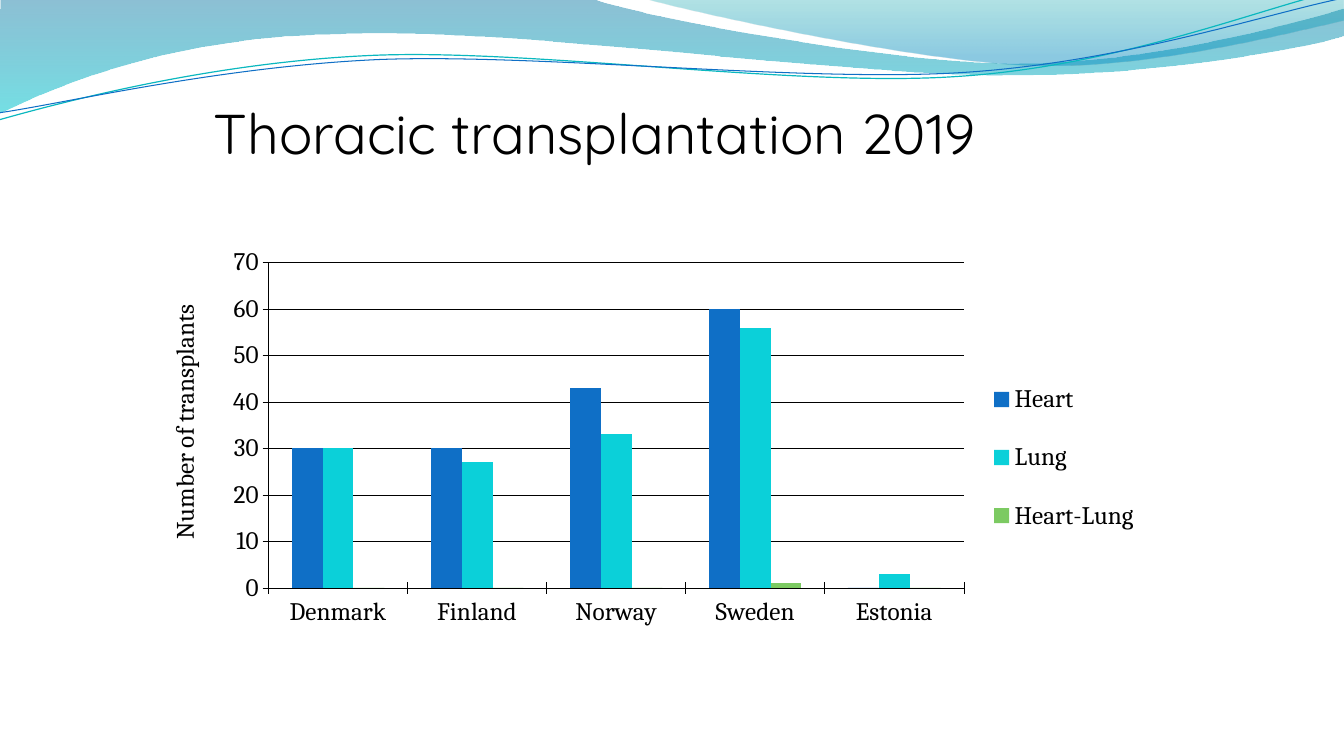
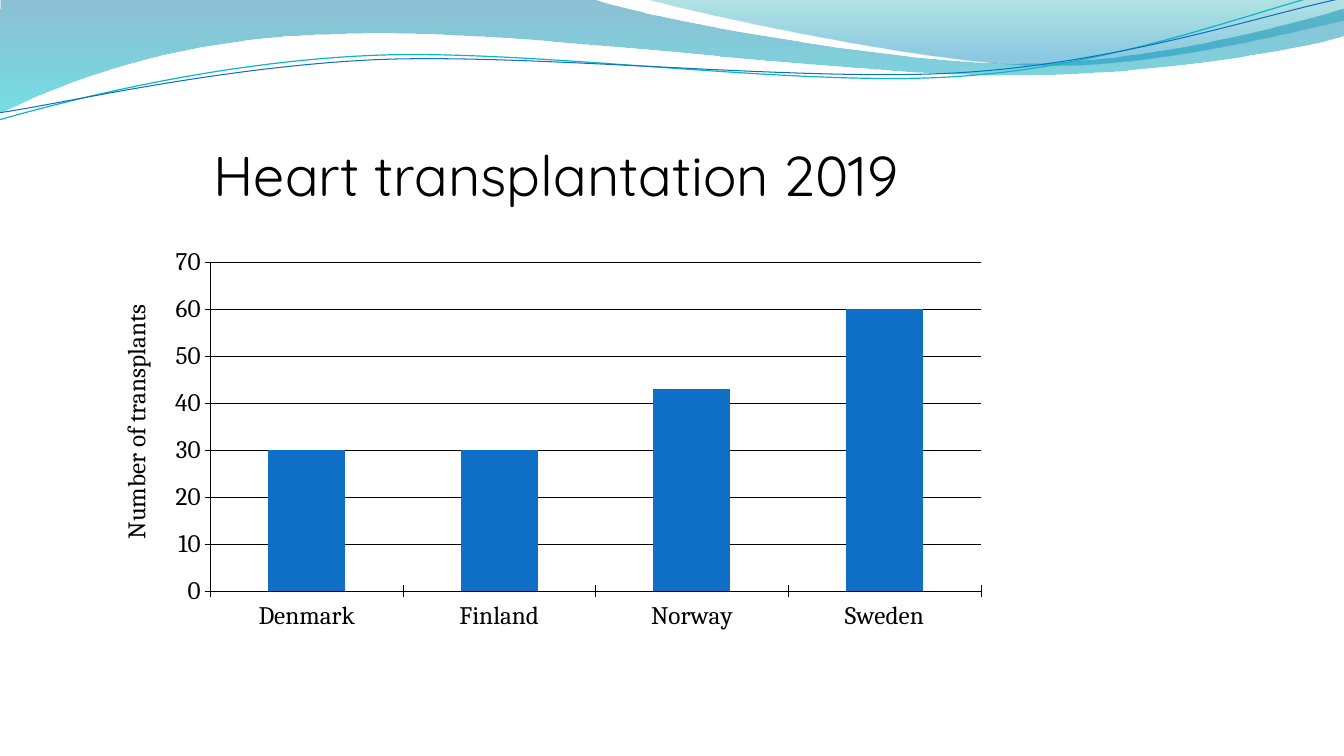
import math
from lxml import etree
from pptx import Presentation
from pptx.chart import data
from pptx.dml import color
from pptx.enum import chart as kinds, text
from pptx.oxml import ns
from pptx.util import Pt

RGB = color.RGBColor
BLACK = RGB(0, 0, 0)
BLUE = RGB(0x0F, 0x6F, 0xC6)
CYAN = RGB(0x0B, 0xD0, 0xD9)
GREEN = RGB(0x7C, 0xCA, 0x62)
TEAL = RGB(0x0A, 0xB8, 0xBF)
DEEP = RGB(0x00, 0x74, 0xA1)
AQUA = RGB(0x00, 0xC6, 0xCF)
SEA = RGB(0x00, 0xA1, 0xA9)
SKY = RGB(0x00, 0x8B, 0xBF)
HEAD, BODY = "Quicksand", "Cambria"
TILT = 2.7

WIDE = [(0, 0), (422.6, -0.7),
        (456.5, 12.2, 636.5, 45.4, 727.9, 45.4),
        (818.6, 45.4, 919.4, 18.7, 959.8, 6.5), (960.5, 25.9),
        (943.9, 31.7, 834.5, 54.7, 715.7, 54),
        (596.9, 54, 366.5, 20.2, 247, 24.5),
        (123.8, 25.9, 43.9, 59.8, -1.4, 81.4), (0, 0)]
SHORT = [(459.4, -0.7),
         (488.9, 7.9, 654.5, 44.6, 738, 46.8),
         (820.8, 49.7, 923, 23, 959.8, 15.1), (959.8, 0), (459.4, -0.7)]
UPPER = [(-0.7, 85.7),
         (45.4, 72.7, 151.2, 44.6, 265.7, 39.6),
         (379.4, 34.6, 568.1, 62.6, 683.3, 54.7),
         (799.2, 47.5, 900.7, 5.8, 957.6, -7.2)]
LOWER = [(-0.7, 80.6),
         (44.6, 74.2, 157, 47.5, 271.4, 42.5),
         (386.6, 38.2, 573.1, 59, 687.6, 51.8),
         (802.1, 44.6, 903.6, 10.1, 959.8, -1.4)]


def turn(x, y, angle, mid):
    cos, sin = math.cos(math.radians(angle)), math.sin(math.radians(angle))
    dx, dy = x - mid[0], y - mid[1]
    return mid[0] + dx * cos - dy * sin, mid[1] + dx * sin + dy * cos


def place(chart, tag, index, x, y, w=None, h=None):
    node = next(chart.element.iter(ns.qn(tag)))
    old = node.find(ns.qn("c:layout"))
    if old is not None:
        node.remove(old)
    layout = etree.Element(ns.qn("c:layout"))
    node.insert(index, layout)
    manual = etree.SubElement(layout, ns.qn("c:manualLayout"))
    marks = [("layoutTarget", "inner")] if tag == "c:plotArea" else []
    marks += [("xMode", "edge"), ("yMode", "edge"), ("x", x), ("y", y)]
    if w:
        marks += [("w", w), ("h", h)]
    for name, val in marks:
        etree.SubElement(manual, ns.qn("c:" + name)).set("val", str(val))


class Deck:
    def __init__(self):
        self.prs = Presentation()
        self.prs.slide_width, self.prs.slide_height = Pt(960), Pt(540)
        self.layout = self.prs.slide_layouts[5]
        for spare in list(self.layout.placeholders)[1:]:
            spare.element.getparent().remove(spare.element)
        self.slide = None

    def font(self, font, size, name):
        font.size, font.name, font.bold = Pt(size), name, False
        font.color.rgb = BLACK

    def page(self, words, x, y, w, h):
        self.slide = self.prs.slides.add_slide(self.layout)
        title = self.slide.shapes.title
        title.left, title.top, title.width, title.height = map(Pt, (x, y, w, h))
        frame = title.text_frame
        frame.word_wrap = True
        frame.auto_size = text.MSO_AUTO_SIZE.NONE
        frame.vertical_anchor = text.MSO_ANCHOR.TOP
        para = frame.paragraphs[0]
        para.alignment = text.PP_ALIGN.LEFT
        para.line_spacing = 0.8
        run = para.add_run()
        run.text = words
        self.font(run.font, 40, HEAD)

    def curve(self, path, close, tilt=0):
        ends = path[0], path[-1][-2:]
        mid = [sum(pair) / 2 for pair in zip(*ends)]
        dots = [turn(*part[k:k + 2], tilt, mid)
                for part in path for k in range(0, len(part), 2)]
        dots = [(Pt(x), Pt(y)) for x, y in dots]
        pen = self.slide.shapes.build_freeform(*dots[0])
        pen.add_line_segments(dots[1:], close=close)
        shape = pen.convert_to_shape()
        lines = iter(list(shape.element.spPr.iter(ns.qn("a:lnTo"))))
        for part in path[1:]:
            first = next(lines)
            if len(part) == 6:
                bend = etree.Element(ns.qn("a:cubicBezTo"))
                first.addprevious(bend)
                for line in (first, next(lines), next(lines)):
                    bend.append(line[0])
                    line.getparent().remove(line)
        shape.rotation = -tilt
        shape.shadow.inherit = False
        self.layout.element.cSld.spTree.append(shape.element)
        return shape

    def band(self, path, *stops):
        shape = self.curve(path, True)
        shape.line.fill.background()
        shape.fill.gradient()
        shape.fill.gradient_angle = 270
        for stop, (pos, tint, alpha) in zip(shape.fill.gradient_stops, stops):
            stop.position = pos
            stop.color.rgb = tint
        tints = list(shape.element.spPr.iter(ns.qn("a:srgbClr")))
        for node, (pos, tint, alpha) in zip(tints, stops):
            etree.SubElement(node, ns.qn("a:alpha")).set("val", str(alpha * 1000))

    def wave(self, path, tint, width):
        shape = self.curve(path, False, TILT)
        shape.fill.background()
        shape.line.color.rgb = tint
        shape.line.width = Pt(width)

    def rule(self, line):
        line.color.rgb = BLACK
        line.width = Pt(0.25)

    def bars(self, kind, box, cats, series, plot, label, overlap=0, legend=None):
        source = data.CategoryChartData()
        source.categories = cats
        for name, vals, tint in series:
            source.add_series(name, vals)
        chart = self.slide.shapes.add_chart(kind, *map(Pt, box), source).chart
        self.font(chart.font, 18, BODY)
        chart.has_title = False
        group = chart.plots[0]
        group.gap_width, group.overlap = 150, overlap
        group.vary_by_categories = False
        for item, (name, vals, tint) in zip(group.series, series):
            item.format.fill.solid()
            item.format.fill.fore_color.rgb = tint
            item.invert_if_negative = False
        for axis in (chart.category_axis, chart.value_axis):
            axis.major_tick_mark = kinds.XL_TICK_MARK.CROSS
            axis.minor_tick_mark = kinds.XL_TICK_MARK.NONE
            self.font(axis.tick_labels.font, 18, BODY)
            self.rule(axis.format.line)
        axis = chart.value_axis
        axis.minimum_scale, axis.maximum_scale, axis.major_unit = 0, 70, 10
        axis.has_major_gridlines = True
        self.rule(axis.major_gridlines.format.line)
        run = axis.axis_title.text_frame.paragraphs[0].add_run()
        run.text = "Number of transplants"
        self.font(run.font, 18, BODY)
        body = next(axis.axis_title.element.iter(ns.qn("a:bodyPr")))
        body.set("rot", "-5400000")
        body.set("vert", "horz")
        place(chart, "c:plotArea", 0, *plot)
        place(chart, "c:title", 1, *label)
        chart.has_legend = legend is not None
        if legend:
            chart.legend.position = kinds.XL_LEGEND_POSITION.RIGHT
            chart.legend.include_in_layout = False
            self.font(chart.legend.font, 18, BODY)
            place(chart, "c:legend", 1, *legend)


def main():
    deck = Deck()
    lands = ["Denmark", "Finland", "Norway", "Sweden", "Estonia"]
    heart = [30, 30, 43, 60, 0]
    types = kinds.XL_CHART_TYPE

    deck.page("Thoracic transplantation 2019", 145.4, 76.3, 630, 90)
    deck.band(WIDE, (0, DEEP, 45), (1, AQUA, 55))
    deck.band(SHORT, (0, SEA, 30), (0.8, SKY, 45))
    deck.wave(UPPER, TEAL, 0.85)
    deck.wave(LOWER, BLUE, 0.75)
    deck.bars(types.COLUMN_CLUSTERED, (109.4, 162, 722.9, 308.2), lands,
              [("Heart", heart, BLUE),
               ("Lung", [30, 27, 33, 56, 3], CYAN),
               ("Heart-Lung", [0, 0, 0, 1, 0], GREEN)],
              (0.114, 0.083, 0.687, 0.754), (0.01, 0.17),
              legend=(0.82, 0.3, 0.16, 0.47))

    deck.page("Heart transplantation 2019", 145.4, 105.8, 570.2, 55.4)
    deck.bars(types.COLUMN_STACKED, (68.4, 161.3, 671.8, 311.8), lands[:4],
              [("Series 1", heart[:4], BLUE)],
              (0.122, 0.083, 0.819, 0.754), (0.02, 0.17), overlap=100)

    deck.prs.save("out.pptx")


if __name__ == "__main__":
    main()
